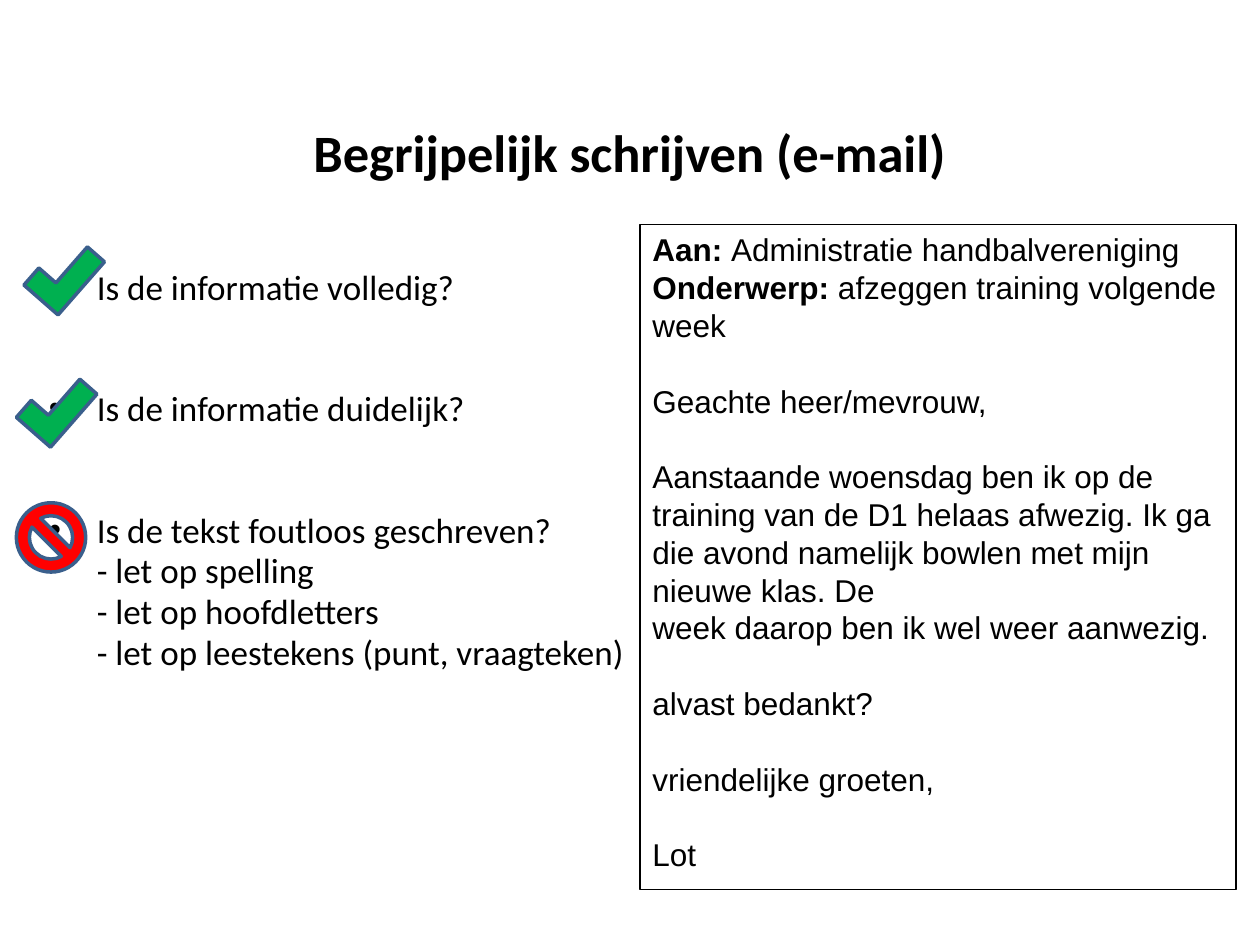
"""Build a slide with a checklist for clear writing beside a sample e-mail."""
from pptx import Presentation
from pptx.dml.color import RGBColor
from pptx.enum.shapes import MSO_SHAPE
from pptx.enum.text import MSO_ANCHOR, PP_ALIGN
from pptx.oxml.ns import qn
from pptx.util import Inches, Pt
from lxml import etree

CORNER, NO_SYMBOL, RECTANGLE = MSO_SHAPE.CORNER, MSO_SHAPE.NO_SYMBOL, MSO_SHAPE.RECTANGLE
TOP, MIDDLE = MSO_ANCHOR.TOP, MSO_ANCHOR.MIDDLE
LEFT, CENTER = PP_ALIGN.LEFT, PP_ALIGN.CENTER


def color(value):
    return RGBColor.from_string(value)


def add_text(frame, runs, size, font="Calibri", align=LEFT, before=0, spacing=1.0, indent=0, bullet=False):
    para = frame.paragraphs[0]
    if para.runs:
        para = frame.add_paragraph()
    para.alignment, para.space_before, para.line_spacing = align, Pt(before), spacing
    for text, bold in runs:
        span = para.add_run()
        span.text = text
        span.font.name, span.font.size, span.font.bold = font, Pt(size), bold
        span.font.color.rgb = color("000000")
    properties = para._p.get_or_add_pPr()
    properties.set("marL", str(Inches(indent)))
    properties.set("indent", str(Inches(-indent if bullet else 0)))
    if bullet:
        etree.SubElement(properties, qn("a:buFont")).set("typeface", "Arial")
        etree.SubElement(properties, qn("a:buChar")).set("char", "•")


deck = Presentation()
deck.slide_width, deck.slide_height = Inches(10), Inches(7.5)
page = deck.slides.add_slide(deck.slide_layouts[6])

frames = []
for left, top, width, height, anchor in [
    (0.5, 0.58, 9, 1.25, MIDDLE),
    (0.29, 1.58, 9.42, 5.75, TOP),
    (5.08, 1.78, 4.69, 5.21, TOP),
]:
    box = page.shapes.add_textbox(Inches(left), Inches(top), Inches(width), Inches(height))
    box.text_frame.word_wrap = True
    box.text_frame.vertical_anchor = anchor
    frames.append(box.text_frame)
title, checklist, email = frames

add_text(title, [("Begrijpelijk schrijven (e-mail)", True)], 30, align=CENTER)

checklist.margin_top = Inches(0.59)
for text, before, bullet in [
    ("Is de informatie volledig?", 0, True),
    ("Is de informatie duidelijk?", 50.2, True),
    ("Is de tekst foutloos geschreven?", 50.2, True),
    ("- let op spelling", 4, False),
    ("- let op hoofdletters", 4, False),
    ("- let op leestekens (punt, vraagteken)", 4, False),
]:
    add_text(checklist, [(text, False)], 20, before=before, spacing=0.8, indent=0.38, bullet=bullet)

EMAIL_LINE = 21.6
for runs, blank_lines in [
    ([("Aan: ", True), ("Administratie handbalvereniging", False)], 0),
    ([("Onderwerp: ", True), ("afzeggen training volgende week", False)], 0),
    ([("Geachte heer/mevrouw,", False)], 1),
    ([("Aanstaande woensdag ben ik op de training van de D1 helaas afwezig. "
       "Ik ga die avond namelijk bowlen met mijn nieuwe klas. De", False)], 1),
    ([("week daarop ben ik wel weer aanwezig.", False)], 0),
    ([("alvast bedankt?", False)], 1),
    ([("vriendelijke groeten,", False)], 1),
    ([("Lot", False)], 1),
]:
    add_text(email, runs, 18, font="Arial", before=blank_lines * EMAIL_LINE, spacing=Pt(EMAIL_LINE))

for kind, left, top, width, height, rotation, fill, line, weight in [
    (NO_SYMBOL, 0.13, 3.99, 0.55, 0.55, 0, "FF0000", "3A5F8C", 2),
    (CORNER, 0.23, 1.99, 0.56, 0.36, 311.2, "00B050", "3A5F8C", 2),
    (CORNER, 0.17, 3.04, 0.56, 0.36, 311.2, "00B050", "3A5F8C", 2),
    (RECTANGLE, 5.08, 1.78, 4.73, 5.28, 0, None, "000000", 0.75),
]:
    shape = page.shapes.add_shape(kind, Inches(left), Inches(top), Inches(width), Inches(height))
    shape.rotation = rotation
    shape.shadow.inherit = False
    if fill:
        shape.fill.solid()
        shape.fill.fore_color.rgb = color(fill)
    else:
        shape.fill.background()
    shape.line.color.rgb = color(line)
    shape.line.width = Pt(weight)

deck.save("out.pptx")
